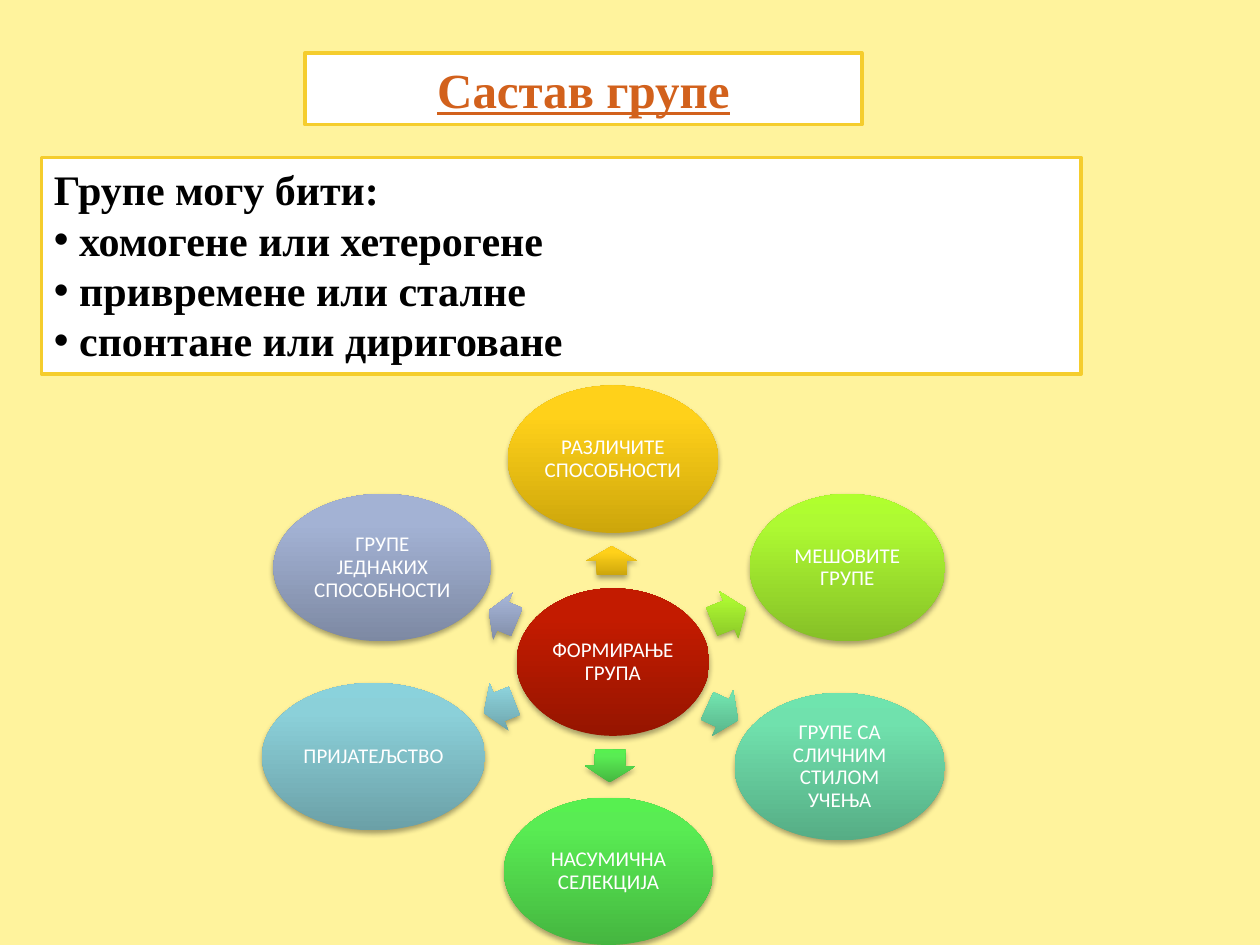
from copy import deepcopy
from dataclasses import dataclass

from lxml.etree import SubElement
from pptx import Presentation
from pptx.dml.color import RGBColor
from pptx.enum.shapes import MSO_SHAPE
from pptx.enum.text import MSO_ANCHOR, PP_ALIGN
from pptx.oxml.ns import qn
from pptx.util import Inches, Pt


@dataclass(frozen=True)
class Theme:
    back: str = "FFF39D"
    panel: str = "FFFFFF"
    border: str = "F5CD2D"
    title: str = "D2611C"
    body: str = "000000"
    label: str = "FFFFFF"
    shade: str = "000000"
    red: tuple = ("961500", "C31B00", "C41B00")
    gold: tuple = ("CDA60B", "FFD11A", "FFD11B")
    lime: tuple = ("86C027", "AEFA32", "B0FF2E")
    green: tuple = ("45B640", "59EC53", "57F050")
    mint: tuple = ("56AD85", "70E1AD", "6FE4AE")
    aqua: tuple = ("6BA0A7", "8BD0D9", "8AD2DC")
    blue: tuple = ("7D89A3", "A3B2D4", "A3B3D6")
    serif: str = "Times New Roman"
    sans: str = "Calibri"
    title_size: int = 28
    body_size: int = 24
    label_size: int = 12


THEME = Theme()
NODE_HIGH = 1.17
ARROW_HIGH = 0.4

HUB = ("ФОРМИРАЊЕ ГРУПА", THEME.red, (4.1, 4.67, 1.53))
# label, colours, ellipse (left, top, width), arrow (left, top, width, turn)
SPOKES = [
    ("РАЗЛИЧИТЕ СПОСОБНОСТИ", THEME.gold, (4.03, 3.06, 1.67), (4.74, 4.25, 0.23, 270)),
    ("МЕШОВИТЕ ГРУПЕ", THEME.lime, (5.95, 3.92, 1.55), (5.64, 4.68, 0.29, 338.1)),
    ("НАСУМИЧНА СЕЛЕКЦИЈА", THEME.green, (4, 6.33, 1.66), (4.71, 5.88, 0.26, 91.1)),
    ("ГРУПЕ СА СЛИЧНИМ СТИЛОМ УЧЕЊА", THEME.mint, (5.83, 5.5, 1.67), (5.6, 5.46, 0.27, 24.8)),
    ("ПРИЈАТЕЉСТВО", THEME.aqua, (2.08, 5.42, 1.77), (3.83, 5.41, 0.26, 158.4)),
    ("ГРУПЕ ЈЕДНАКИХ СПОСОБНОСТИ", THEME.blue, (2.17, 3.92, 1.73), (3.87, 4.69, 0.24, 202.3)),
]
KINDS = ["хомогене или хетерогене", "привремене или сталне", "спонтане или дириговане"]


def color(code):
    return RGBColor.from_string(code)


def add_run(para, text, font, size, code, bold=False, under=None):
    run = para.add_run()
    run.text = text
    run.font.name = font
    run.font.size = Pt(size)
    run.font.color.rgb = color(code)
    run.font.bold = bold
    run.font.underline = under


def add_form(slide, kind, left, top, width, height):
    form = slide.shapes.add_shape(
        kind, Inches(left), Inches(top), Inches(width), Inches(height))
    form.shadow.inherit = False
    return form


def add_panel(slide, *place):
    panel = add_form(slide, MSO_SHAPE.RECTANGLE, *place)
    panel.fill.solid()
    panel.fill.fore_color.rgb = color(THEME.panel)
    panel.line.color.rgb = color(THEME.border)
    panel.line.width = Pt(2)
    frame = panel.text_frame
    frame.word_wrap = True
    frame.vertical_anchor = MSO_ANCHOR.TOP
    return frame


def add_bullet(para):
    para.alignment = PP_ALIGN.LEFT
    props = para._p.get_or_add_pPr()
    props.set("marL", str(Inches(0.2)))
    props.set("indent", str(Inches(-0.2)))
    SubElement(props, qn("a:buFont"), typeface="Arial")
    SubElement(props, qn("a:buChar"), char="•")


def add_glow(form, colors):
    """Give a vertical three-stop gradient, no outline and a soft shadow."""
    form.line.fill.background()
    form.fill.gradient()
    form.fill.gradient_angle = 90
    grad = form._element.spPr.find(qn("a:gradFill"))
    grad.set("rotWithShape", "0")
    stops = grad.find(qn("a:gsLst"))
    stops.insert(1, deepcopy(stops[0]))
    for stop, spot, code in zip(form.fill.gradient_stops, (0, 0.8, 1), colors):
        stop.position = spot
        stop.color.rgb = color(code)
    effects = form._element.spPr.find(qn("a:effectLst"))
    shade = SubElement(effects, qn("a:outerShdw"), blurRad=str(Pt(3.1)),
                       dist=str(Pt(1.8)), dir="5400000", rotWithShape="0")
    tint = SubElement(shade, qn("a:srgbClr"), val=THEME.shade)
    SubElement(tint, qn("a:alpha"), val="35000")


def add_node(slide, label, colors, place):
    node = add_form(slide, MSO_SHAPE.OVAL, *place, NODE_HIGH)
    add_glow(node, colors)
    frame = node.text_frame
    frame.word_wrap = True
    frame.vertical_anchor = MSO_ANCHOR.MIDDLE
    frame.margin_left = frame.margin_right = Inches(0.02)
    frame.margin_top = frame.margin_bottom = Inches(0.02)
    para = frame.paragraphs[0]
    para.alignment = PP_ALIGN.CENTER
    para.line_spacing = 0.9
    add_run(para, label, THEME.sans, THEME.label_size, THEME.label)


def add_arrow(slide, colors, left, top, width, turn):
    arrow = add_form(slide, MSO_SHAPE.RIGHT_ARROW, left, top, width, ARROW_HIGH)
    arrow.adjustments[0] = 0.6
    arrow.adjustments[1] = 0.5
    arrow.rotation = turn
    add_glow(arrow, colors)


def add_title(slide):
    para = add_panel(slide, 2.42, 0.42, 4.42, 0.57).paragraphs[0]
    para.alignment = PP_ALIGN.CENTER
    add_run(para, "Састав групе", THEME.serif, THEME.title_size, THEME.title, True, True)


def add_list(slide):
    frame = add_panel(slide, 0.33, 1.25, 8.25, 1.72)
    style = (THEME.serif, THEME.body_size, THEME.body, True)
    intro = frame.paragraphs[0]
    intro.alignment = PP_ALIGN.LEFT
    add_run(intro, "Групе могу бити:", *style)
    for kind in KINDS:
        para = frame.add_paragraph()
        add_bullet(para)
        add_run(para, kind, *style)


def main():
    deck = Presentation()
    deck.slide_width, deck.slide_height = Inches(10), Inches(7.5)
    slide = deck.slides.add_slide(deck.slide_layouts[6])
    slide.background.fill.solid()
    slide.background.fill.fore_color.rgb = color(THEME.back)
    add_title(slide)
    add_list(slide)
    add_node(slide, *HUB)
    for label, colors, place, arrow in SPOKES:
        add_arrow(slide, colors, *arrow)
        add_node(slide, label, colors, place)
    deck.save("out.pptx")


if __name__ == "__main__":
    main()
